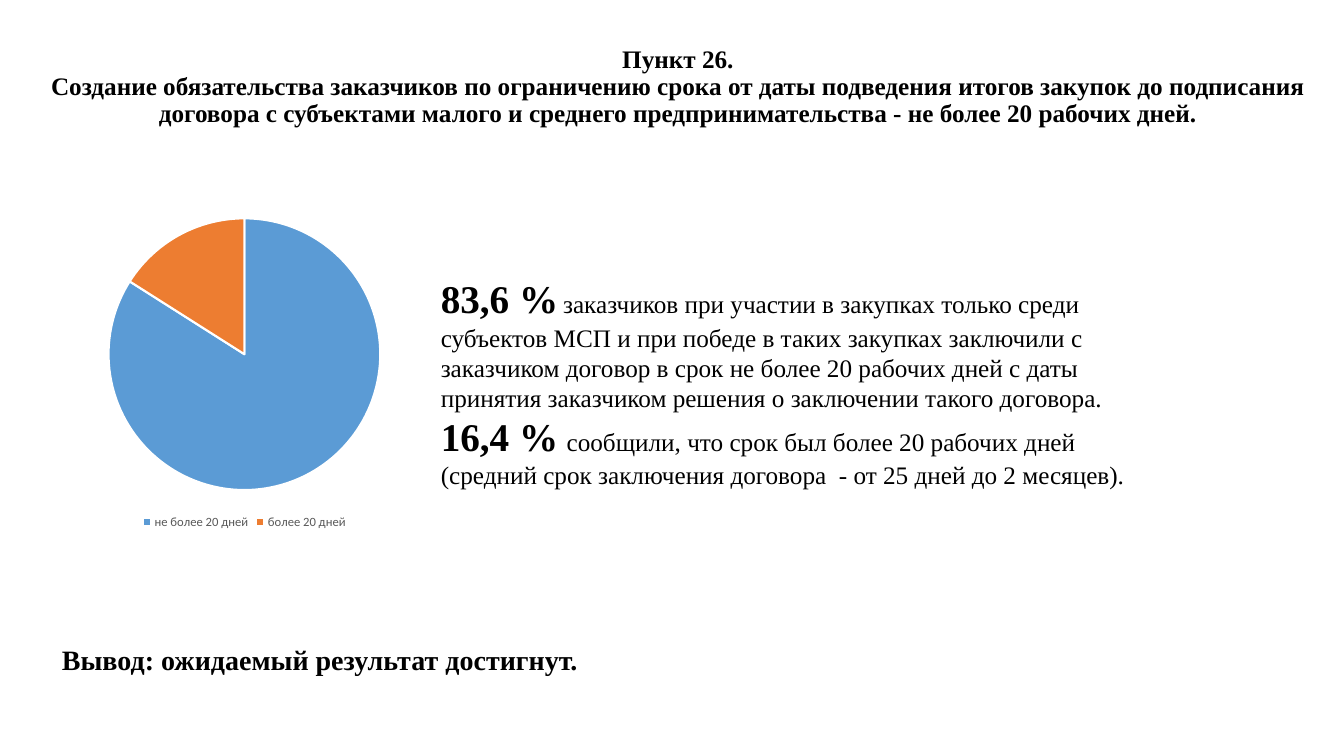
from lxml.etree import SubElement
from pptx import Presentation
from pptx.chart.data import CategoryChartData
from pptx.dml.color import RGBColor
from pptx.enum.chart import XL_CHART_TYPE as ChartType, XL_LEGEND_POSITION as LegendPosition
from pptx.enum.text import MSO_ANCHOR as Anchor, MSO_AUTO_SIZE as AutoSize, PP_ALIGN as Align
from pptx.oxml.ns import qn
from pptx.util import Cm, Pt

BLACK = RGBColor(0x00, 0x00, 0x00)
WHITE = RGBColor(0xFF, 0xFF, 0xFF)
GREY = RGBColor(0x59, 0x59, 0x59)
BLUE = RGBColor(0x5B, 0x9B, 0xD5)
ORANGE = RGBColor(0xED, 0x7D, 0x31)
SERIF = "Times New Roman"
SANS = "Calibri"


def set_font(font, size, color=BLACK, name=SERIF, bold=False):
    """Apply size, colour, typeface and weight to a font."""
    font.size, font.name, font.bold = Pt(size), name, bold
    font.color.rgb = color


def add_text(para, text, **style):
    """Add one formatted span, turning newlines into line breaks."""
    for index, line in enumerate(text.split("\n")):
        if index:
            para.add_line_break()
        span = para.add_run()
        span.text = line
        set_font(span.font, **style)


def add_title(page, text):
    """Move the title placeholder into place and fill it."""
    title = page.shapes.title
    title.left, title.top, title.width, title.height = Cm(0.97), Cm(1.02), Cm(32.23), Cm(2.36)
    frame = title.text_frame
    frame.auto_size = AutoSize.NONE
    frame.vertical_anchor = Anchor.MIDDLE
    para = frame.paragraphs[0]
    para.alignment = Align.CENTER
    para.line_spacing = 0.9
    add_text(para, text, size=18, bold=True)


def add_box(page, left, top, width, height, paragraphs):
    """Add a wrapping text box from lists of (text, size, bold) spans."""
    box = page.shapes.add_textbox(Cm(left), Cm(top), Cm(width), Cm(height))
    frame = box.text_frame
    frame.word_wrap = True
    frame.auto_size = AutoSize.SHAPE_TO_FIT_TEXT
    for index, spans in enumerate(paragraphs):
        para = frame.add_paragraph() if index else frame.paragraphs[0]
        for text, size, bold in spans:
            add_text(para, text, size=size, bold=bold)


def place_plot(chart, **position):
    """Fix the inner plot area as fractions of the chart."""
    area = chart.plots[0]._element.getparent()
    for old in area.findall(qn("c:layout")):
        area.remove(old)
    layout = SubElement(area, qn("c:layout"))
    area.insert(0, layout)
    manual = SubElement(layout, qn("c:manualLayout"))
    settings = {"layoutTarget": "inner", "xMode": "edge", "yMode": "edge", **position}
    for name, value in settings.items():
        SubElement(manual, qn(f"c:{name}")).set("val", str(value))


def add_pie(page, shares):
    """Add the pie of contract terms with its legend below."""
    data = CategoryChartData()
    data.categories = [name for name, value, color in shares]
    data.add_series("Series 1", [value for name, value, color in shares])
    chart = page.shapes.add_chart(
        ChartType.PIE, Cm(1.88), Cm(5.16), Cm(8.56), Cm(8.28), data).chart
    set_font(chart.font, 10, name=SANS)
    chart.has_title = False
    chart.has_legend = True
    chart.legend.position = LegendPosition.BOTTOM
    chart.legend.include_in_layout = False
    set_font(chart.legend.font, 9, GREY, SANS)
    plot = chart.plots[0]
    plot.vary_by_categories = True
    for index, (name, value, color) in enumerate(shares):
        style = plot.series[0].points[index].format
        style.fill.solid()
        style.fill.fore_color.rgb = color
        style.line.color.rgb = WHITE
        style.line.width = Pt(1.5)
    place_plot(chart, x=0.1, y=0.04, w=0.8, h=0.83)


def main():
    """Build and save the slide."""
    deck = Presentation()
    deck.slide_width, deck.slide_height = Cm(33.87), Cm(19.05)
    page = deck.slides.add_slide(deck.slide_layouts[5])
    add_title(page, "Пункт 26.\nСоздание обязательства заказчиков по ограничению срока "
                    "от даты подведения итогов закупок до подписания договора с субъектами "
                    "малого и среднего предпринимательства - не более 20 рабочих дней.")
    add_pie(page, [("не более 20 дней", 84, BLUE), ("более 20 дней", 16, ORANGE)])
    add_box(page, 10.86, 6.8, 18.9, 6.32, [
        [("83,6 %", 28, True), (" ", 14, True),
         ("заказчиков при участии в закупках только среди субъектов МСП и при победе "
          "в таких закупках заключили с заказчиком договор в срок не более 20 рабочих дней "
          "с даты принятия заказчиком решения о заключении такого договора.", 18, False)],
        [("16,4 %", 28, True), (" ", 24, True),
         ("сообщили, что срок был более 20 рабочих дней  (средний срок заключения "
          "договора  - от 25 дней до 2 месяцев).", 18, False)],
    ])
    add_box(page, 1.31, 16.06, 31.9, 1.88,
            [[("Вывод: ожидаемый результат достигнут.", 20, True)]])
    deck.save("out.pptx")


if __name__ == "__main__":
    main()
